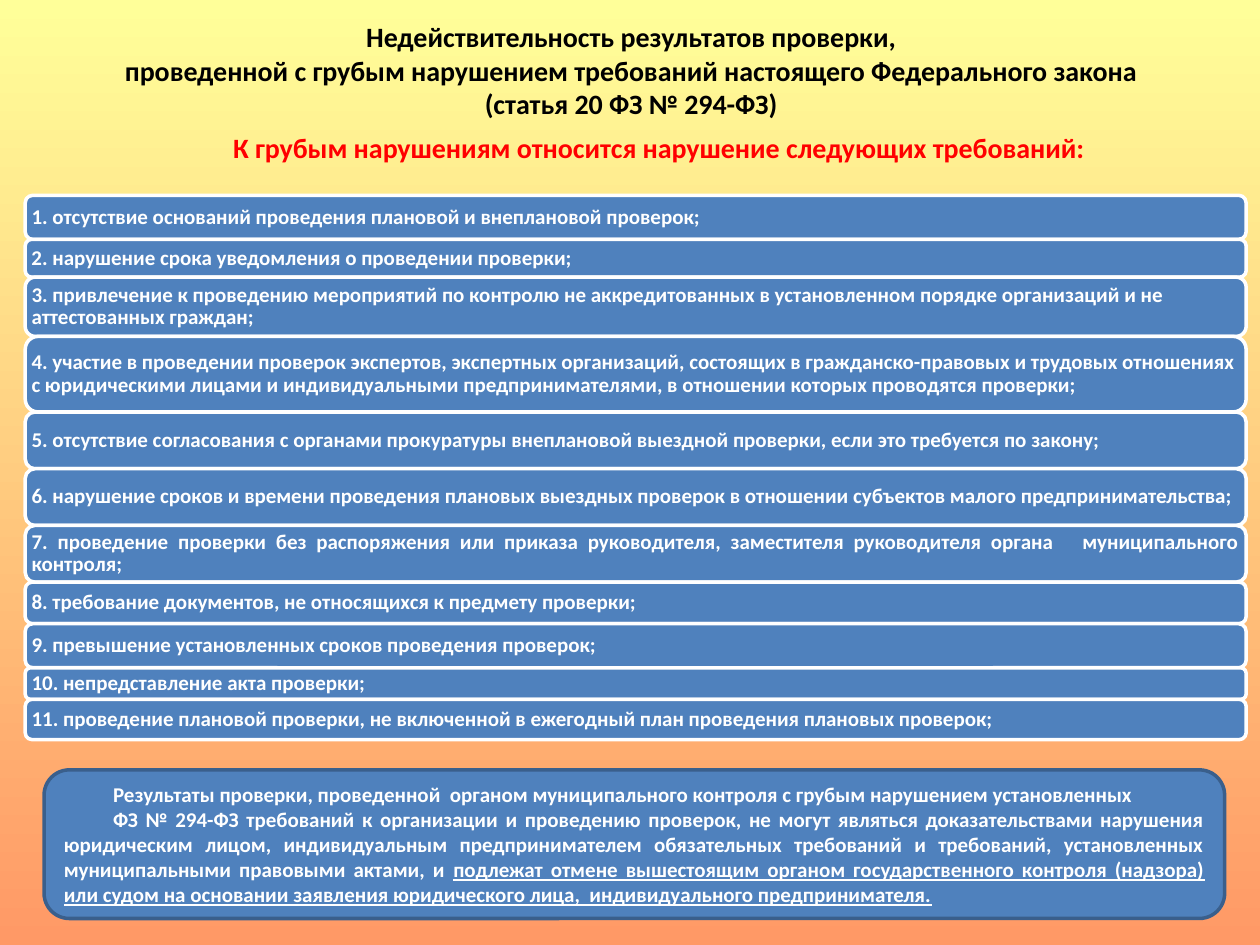
from dataclasses import dataclass

from pptx import Presentation
from pptx.dml.color import RGBColor
from pptx.enum.shapes import MSO_SHAPE
from pptx.enum.text import MSO_ANCHOR, MSO_AUTO_SIZE, PP_ALIGN
from pptx.shapes.autoshape import Shape
from pptx.slide import Slide
from pptx.util import Inches, Pt

ROUND = MSO_SHAPE.ROUNDED_RECTANGLE
MIDDLE = MSO_ANCHOR.MIDDLE
LEFT, CENTER, JUSTIFY = PP_ALIGN.LEFT, PP_ALIGN.CENTER, PP_ALIGN.JUSTIFY


@dataclass(frozen=True)
class Theme:
    font: str = "Calibri"
    head: int = 16
    body: int = 12
    line: int = 2
    black: str = "000000"
    white: str = "FFFFFF"
    red: str = "FF0000"
    blue: str = "4F81BD"
    edge: str = "3A5F8C"
    top: str = "FFFF99"
    base: str = "FF9966"


@dataclass(frozen=True)
class Row:
    height: float
    text: str
    align: PP_ALIGN = LEFT


THEME = Theme()
ROUNDING = 0.17
PAD = 0.05
INDENT = 0.39

TITLE = (
    "Недействительность результатов проверки,\v"
    "проведенной с грубым нарушением требований настоящего Федерального закона\v"
    "(статья 20 ФЗ № 294-ФЗ)"
)
LEAD = "К грубым нарушениям относится нарушение следующих требований:"
ROWS = [
    Row(0.35, "отсутствие оснований проведения плановой и внеплановой проверок;"),
    Row(0.3, "нарушение срока уведомления о проведении проверки;"),
    Row(0.47, "привлечение к проведению мероприятий по контролю не аккредитованных "
              "в установленном порядке организаций и не аттестованных граждан;"),
    Row(0.6, "участие в проведении проверок экспертов, экспертных организаций, "
             "состоящих в гражданско-правовых и трудовых отношениях с юридическими "
             "лицами и индивидуальными предпринимателями, в отношении которых "
             "проводятся проверки;"),
    Row(0.45, "отсутствие согласования с органами прокуратуры внеплановой выездной "
              "проверки, если это требуется по закону;"),
    Row(0.45, "нарушение сроков и времени проведения плановых выездных проверок "
              "в отношении субъектов малого предпринимательства;"),
    Row(0.45, "проведение проверки без распоряжения или приказа руководителя, "
              "заместителя руководителя органа   муниципального контроля;", JUSTIFY),
    Row(0.33, "требование документов, не относящихся к предмету проверки;"),
    Row(0.35, "превышение установленных сроков проведения проверок;"),
    Row(0.25, "непредставление акта проверки;"),
    Row(0.32, "проведение плановой проверки, не включенной в ежегодный план "
              "проведения плановых проверок;"),
]
RESULT = (
    "Результаты проверки, проведенной  органом муниципального контроля "
    "с грубым нарушением установленных "
)
RULE = (
    "ФЗ № 294-ФЗ требований к организации и проведению проверок, не могут являться "
    "доказательствами нарушения юридическим лицом, индивидуальным предпринимателем "
    "обязательных требований и требований, установленных муниципальными правовыми "
    "актами, и "
)
CANCEL = (
    "подлежат отмене вышестоящим органом государственного контроля (надзора) или "
    "судом на основании заявления юридического лица,  индивидуального предпринимателя."
)


def style(para, size: int, color: str, align: PP_ALIGN, indent: float = 0) -> None:
    para.alignment = align
    font = para.font
    font.name, font.size, font.bold = THEME.font, Pt(size), True
    font.color.rgb = RGBColor.from_string(color)
    if indent:
        props = para._p.get_or_add_pPr()
        props.set("marL", "0")
        props.set("indent", str(Inches(indent)))


def paint(slide: Slide) -> None:
    fill = slide.background.fill
    fill.gradient()
    fill.gradient_angle = 270
    for stop, color in zip(fill.gradient_stops, (THEME.top, THEME.base)):
        stop.color.rgb = RGBColor.from_string(color)


def add_head(slide: Slide) -> None:
    title = slide.shapes.title
    title.left, title.top = Inches(0.51), Inches(0.21)
    title.width, title.height = Inches(9), Inches(0.69)
    frame = title.text_frame
    frame.text = TITLE
    frame.auto_size = MSO_AUTO_SIZE.NONE
    frame.vertical_anchor = MIDDLE
    style(frame.paragraphs[0], THEME.head, THEME.black, CENTER)

    lead = slide.shapes.add_textbox(Inches(0.43), Inches(0.99), Inches(9.21), Inches(0.47))
    lead.text_frame.word_wrap = True
    lead.text_frame.text = LEAD
    para = lead.text_frame.paragraphs[0]
    style(para, THEME.head, THEME.red, CENTER, INDENT)
    para.space_before = Pt(3)


def add_box(slide: Slide, left: float, top: float, width: float, height: float,
            edge: str) -> Shape:
    box = slide.shapes.add_shape(
        ROUND, Inches(left), Inches(top), Inches(width), Inches(height))
    box.adjustments[0] = ROUNDING
    box.shadow.inherit = False
    box.fill.solid()
    box.fill.fore_color.rgb = RGBColor.from_string(THEME.blue)
    box.line.color.rgb = RGBColor.from_string(edge)
    box.line.width = Pt(THEME.line)
    box.text_frame.word_wrap = True
    box.text_frame.vertical_anchor = MIDDLE
    return box


def add_rows(slide: Slide) -> None:
    top = 1.55
    for num, row in enumerate(ROWS, 1):
        frame = add_box(slide, 0.2, top, 9.69, row.height, THEME.white).text_frame
        # Rounded corners add 0.29 of their radius to each text margin.
        inset = Inches(PAD - 0.29 * ROUNDING * row.height)
        frame.margin_left = frame.margin_right = inset
        frame.margin_top = frame.margin_bottom = inset
        frame.text = f"{num}. {row.text}"
        para = frame.paragraphs[0]
        style(para, THEME.body, THEME.white, row.align)
        para.line_spacing = 0.9
        top += row.height


def add_result(slide: Slide) -> None:
    frame = add_box(slide, 0.35, 6.11, 9.37, 1.18, THEME.edge).text_frame
    frame.text = f"{RESULT}\n{RULE}"
    for para in frame.paragraphs:
        style(para, THEME.body, THEME.white, JUSTIFY, INDENT)
    run = frame.paragraphs[-1].add_run()
    run.text = CANCEL
    run.font.underline = True


def main() -> None:
    deck = Presentation()
    deck.slide_width, deck.slide_height = Inches(10), Inches(7.5)
    slide = deck.slides.add_slide(deck.slide_layouts[5])
    paint(slide)
    add_head(slide)
    add_rows(slide)
    add_result(slide)
    deck.save("out.pptx")


if __name__ == "__main__":
    main()
